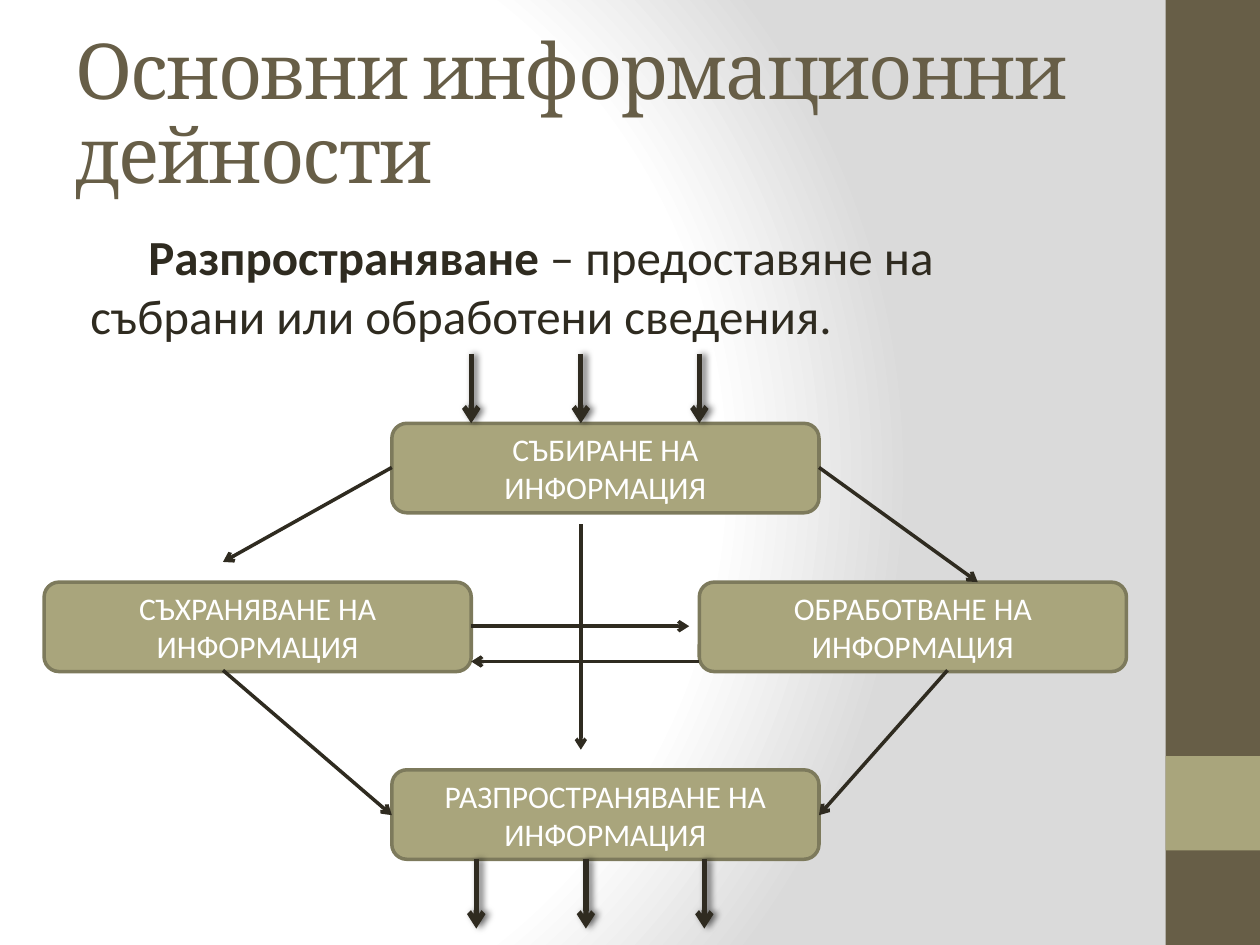
from pptx import Presentation
from pptx import util as u
from pptx.dml import color
from pptx.enum import shapes, text
from pptx.oxml import ns, parse_xml
from lxml import etree

COLS, ROWS = 100, 75
HUES = {"dark": "675E47", "sand": "A9A57C", "edge": "7D7A5C",
        "ink": "2F2B20", "white": "FFFFFF", "gray": "DADADA"}
BOX = (33.9, 7.1)
NODES = [
    (31.1, 33.6, "СЪБИРАНЕ НА ИНФОРМАЦИЯ"),
    (31.1, 61.1, "РАЗПРОСТРАНЯВАНЕ НА ИНФОРМАЦИЯ"),
    (3.5, 46.2, "СЪХРАНЯВАНЕ НА ИНФОРМАЦИЯ"),
    (55.5, 46.2, "ОБРАБОТВАНЕ НА ИНФОРМАЦИЯ"),
]
LINKS = [
    (31.1, 37.1, 17.7, 44.6), (65, 37.1, 77.6, 46.2),
    (46.1, 41.6, 46.1, 59.5), (37.4, 49.7, 54.7, 49.7),
    (55.5, 52.5, 37.4, 52.5), (17.7, 53.2, 31.1, 64.7),
    (75.2, 53.2, 65, 64.7),
]
FLOWS = [(28.1, (37.4, 46.1, 55.5)), (68.2, (37.8, 46.5, 55.9))]
FLOW = 5.5


def grid(*nums):
    return [u.Inches(n * 10 / COLS) for n in nums]


def hue(name):
    return color.RGBColor.from_string(HUES[name])


def sub(node, tag, **attrs):
    return etree.SubElement(node, ns.qn(tag), attrs)


def paint(slide):
    stops = "".join(
        f'<a:gs pos="{pos}000"><a:srgbClr val="{HUES[name]}"/></a:gs>'
        for pos, name in ((0, "white"), (75, "white"), (100, "gray")))
    slide._element.cSld.insert(0, parse_xml(
        f'<p:bg {ns.nsdecls("p", "a")}><p:bgPr><a:gradFill rotWithShape="1">'
        f'<a:gsLst>{stops}</a:gsLst><a:path path="circle">'
        '<a:fillToRect l="20000" t="50000" r="100000" b="50000"/>'
        '</a:path></a:gradFill><a:effectLst/></p:bgPr></p:bg>'))


def write(frame, *runs, size=18, font="Calibri", ink="ink", align="LEFT",
          anchor="TOP", lead=None, track=None, left=0, first=0):
    frame.word_wrap = True
    frame.vertical_anchor = getattr(text.MSO_ANCHOR, anchor)
    para = frame.paragraphs[0]
    para.alignment = getattr(text.PP_ALIGN, align)
    para.line_spacing = lead
    props = para._p.get_or_add_pPr()
    props.set("marL", str(u.Inches(left)))
    props.set("indent", str(u.Inches(first)))
    for words, bold in runs:
        run = para.add_run()
        run.text = words
        run.font.size = u.Pt(size)
        run.font.name = font
        run.font.bold = bold
        run.font.color.rgb = hue(ink)
        if track:
            run.font._element.set("spc", str(track * 100))


def label(slide, spot, *runs, **form):
    write(slide.shapes.add_textbox(*grid(*spot)).text_frame, *runs, **form)


def block(slide, spot, fill, edge=None, kind="RECTANGLE"):
    shape = slide.shapes.add_shape(
        getattr(shapes.MSO_SHAPE, kind), *grid(*spot))
    shape.shadow.inherit = False
    shape.fill.solid()
    shape.fill.fore_color.rgb = hue(fill)
    if edge:
        shape.line.color.rgb = hue(edge)
        shape.line.width = u.Pt(2)
    else:
        shape.line.fill.background()
    return shape


def node(slide, col, row, words):
    shape = block(slide, (col, row, *BOX), "sand", "edge",
                  "ROUNDED_RECTANGLE")
    frame = shape.text_frame
    frame.margin_left = frame.margin_right = u.Inches(0.15)
    write(frame, (words, False), ink="white", align="CENTER",
          anchor="MIDDLE")


def arrow(slide, ends, width=2, shade=False):
    line = slide.shapes.add_connector(
        shapes.MSO_CONNECTOR.STRAIGHT, *grid(*ends))
    line.line.color.rgb = hue("ink")
    line.line.width = u.Pt(width)
    sub(line.line._get_or_add_ln(), "a:tailEnd", type="arrow")
    fx = sub(line._element.spPr, "a:effectLst")
    if shade:
        cast = sub(fx, "a:outerShdw", blurRad=str(u.Pt(4)),
                   dist=str(u.Pt(2)), dir="0", rotWithShape="0")
        tint = sub(cast, "a:srgbClr", val="000000")
        sub(tint, "a:alpha", val="60000")


def main():
    deck = Presentation()
    deck.slide_width, deck.slide_height = grid(COLS, ROWS)
    slide = deck.slides.add_slide(deck.slide_layouts[6])
    paint(slide)
    block(slide, (92.5, 0, 7.5, ROWS), "dark")
    block(slide, (92.5, 60, 7.5, 7.5), "sand")
    label(slide, (5, 3, 83.3, 12.5),
          ("Основни информационни дейности", False), size=44,
          font="Cambria", ink="dark", anchor="MIDDLE", lead=0.9, track=-1)
    label(slide, (5, 17.5, 83.3, 12.1), ("Разпространяване", True),
          (" – предоставяне на събрани или обработени сведения.", False),
          size=28, left=0.12, first=0.46)
    for spot in NODES:
        node(slide, *spot)
    for ends in LINKS:
        arrow(slide, ends)
    for top, cols in FLOWS:
        for col in cols:
            arrow(slide, (col, top, col, top + FLOW), 3, True)
    deck.save("out.pptx")


if __name__ == "__main__":
    main()
